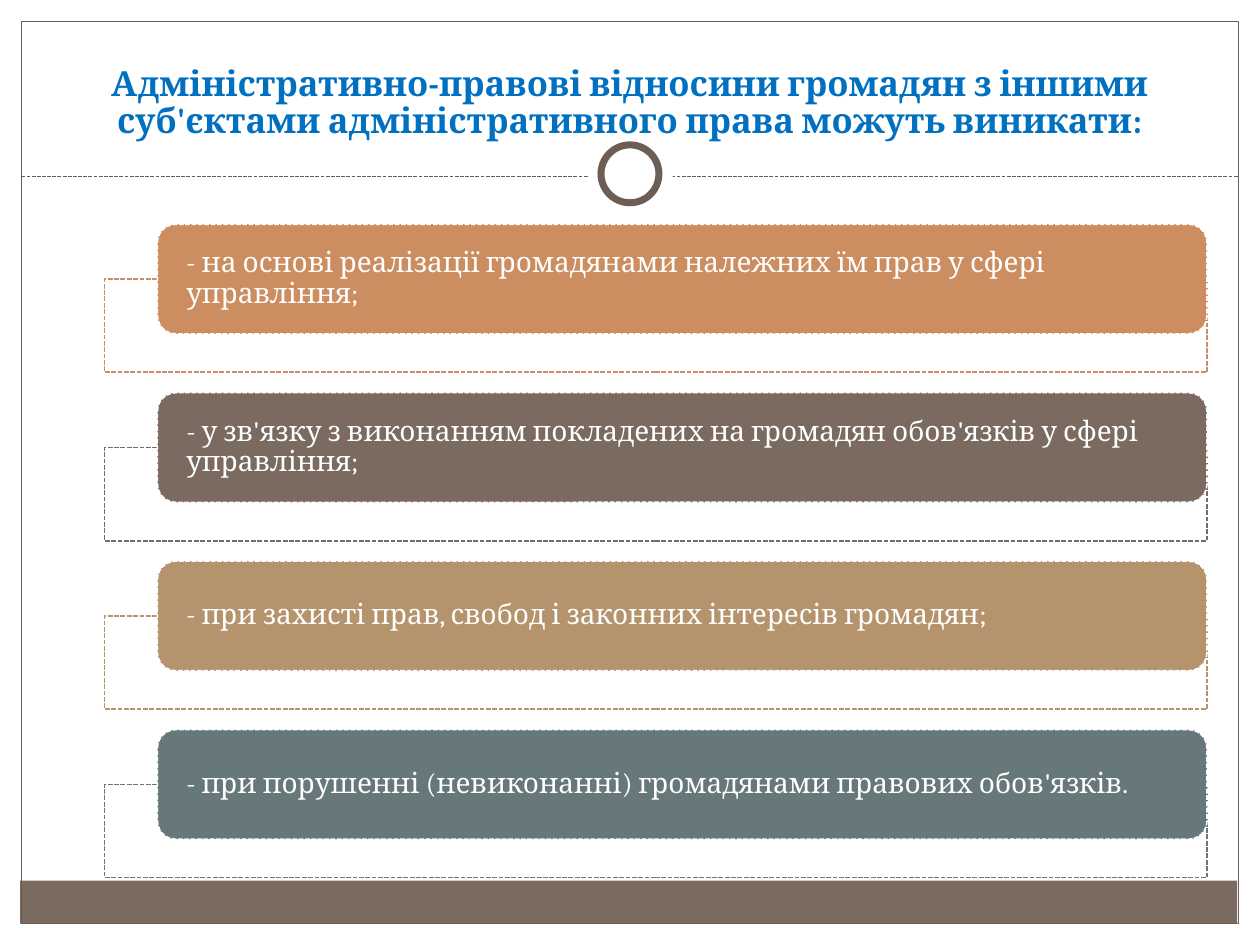
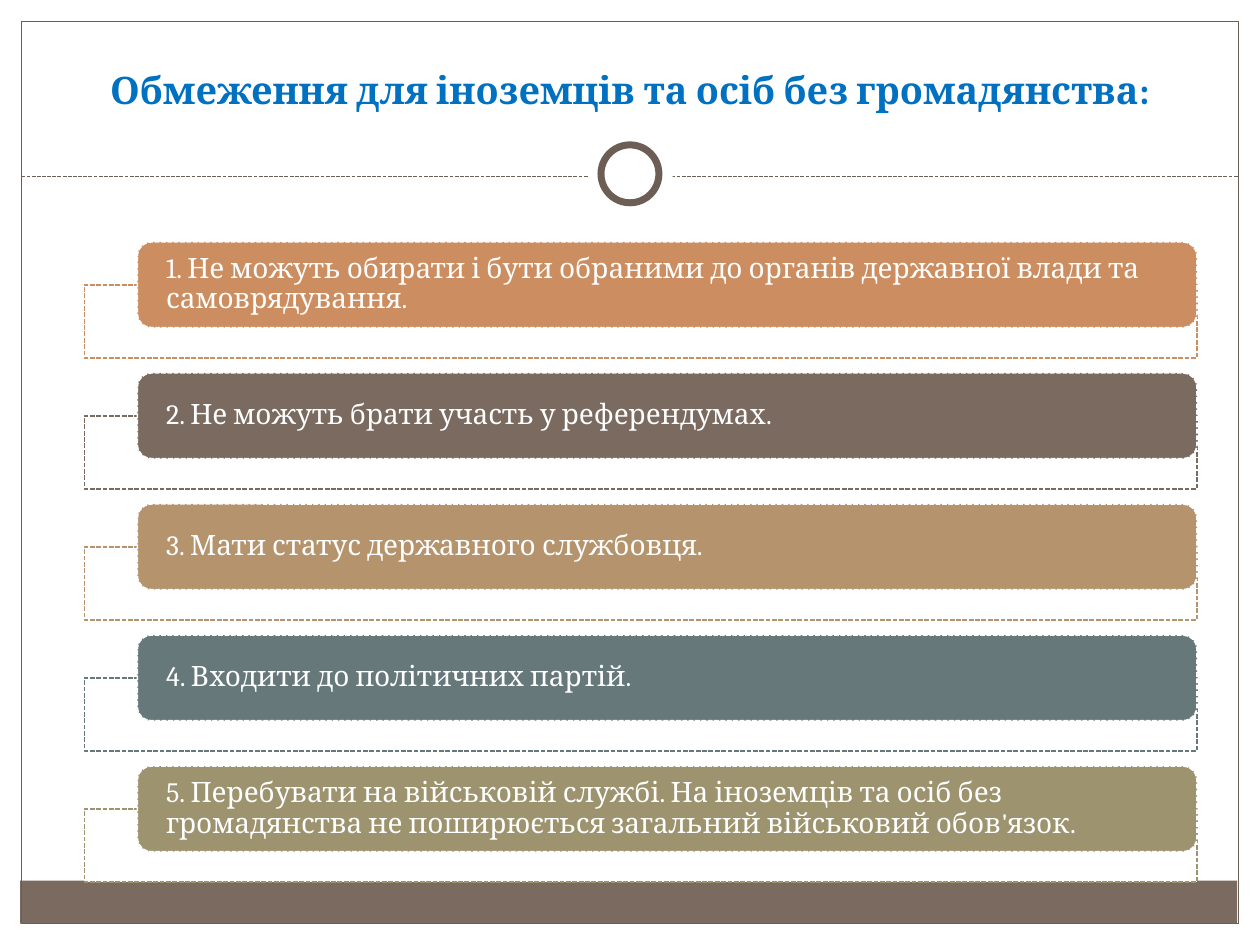
from lxml import etree
from pptx import Presentation
from pptx.dml.color import RGBColor
from pptx.enum.dml import MSO_LINE
from pptx.enum.shapes import MSO_CONNECTOR, MSO_SHAPE
from pptx.enum.text import MSO_ANCHOR, MSO_AUTO_SIZE, PP_ALIGN
from pptx.oxml.ns import qn
from pptx.util import Inches, Pt

RECTANGLE = MSO_SHAPE.RECTANGLE
ROUNDED = MSO_SHAPE.ROUNDED_RECTANGLE
OVAL = MSO_SHAPE.OVAL
STRAIGHT = MSO_CONNECTOR.STRAIGHT
DASH = MSO_LINE.SQUARE_DOT
CENTER, LEFT = PP_ALIGN.CENTER, PP_ALIGN.LEFT
MIDDLE, BOTTOM = MSO_ANCHOR.MIDDLE, MSO_ANCHOR.BOTTOM
NO_AUTOFIT = MSO_AUTO_SIZE.NONE

FONT = "Cambria"
WHITE = "FFFFFF"
TITLE_BLUE = "0070C0"
FRAME_BROWN = "6C5E55"
BAND_BROWN = "7A6A60"
CARD_COLORS = ["CC8E60", BAND_BROWN, "B4936D", "67787B", "9D936F"]

PAGES = [
    {
        "title": "Адміністративно-правові відносини громадян з іншими "
                 "суб'єктами адміністративного права можуть виникати:",
        "title_box": (0.33, 0.25, 9.33, 1.17),
        "title_size": 19.8,
        "title_spacing": 0.9,
        "title_bottom": 0.3,
        "outline_left": 0.83, "card_left": 1.25, "right": 9.58,
        "top": 1.78, "step": 1.337, "card_height": 0.87, "outline_height": 0.74,
        "items": [
            "- на основі реалізації громадянами належних їм прав у сфері управління;",
            "- у зв'язку з виконанням покладених на громадян обов'язків у сфері управління;",
            "- при захисті прав, свобод і законних інтересів громадян;",
            "- при порушенні (невиконанні) громадянами правових обов'язків.",
        ],
    },
    {
        "title": "Обмеження для іноземців та осіб без громадянства:",
        "title_box": (0.5, 0.17, 9, 1.17),
        "title_size": 21.6,
        "title_spacing": 1.0,
        "title_bottom": 0.45,
        "outline_left": 0.67, "card_left": 1.09, "right": 9.5,
        "top": 1.92, "step": 1.04, "card_height": 0.68, "outline_height": 0.58,
        "items": [
            "1. Не можуть обирати і бути обраними до органів державної влади та самоврядування.",
            "2. Не можуть брати участь у референдумах.",
            "3. Мати статус державного службовця.",
            "4. Входити до політичних партій.",
            "5. Перебувати на військовій службі. На іноземців та осіб без громадянства "
            "не поширюється загальний військовий обов'язок.",
        ],
    },
]


def add_box(slide, kind, box, fill=None, line=None, width=0.75, dash=None):
    shape = slide.shapes.add_shape(kind, *[Inches(value) for value in box])
    shape.shadow.inherit = False
    if fill:
        shape.fill.solid()
        shape.fill.fore_color.rgb = RGBColor.from_string(fill)
    else:
        shape.fill.background()
    if line:
        shape.line.color.rgb = RGBColor.from_string(line)
        shape.line.width = Pt(width)
        shape.line.dash_style = dash
    else:
        shape.line.fill.background()
    return shape


def write_text(shape, text, size, color, alignment, anchor, spacing, bold=False):
    frame = shape.text_frame
    frame.text = text
    frame.word_wrap = True
    frame.auto_size = NO_AUTOFIT
    frame.vertical_anchor = anchor
    paragraph = frame.paragraphs[0]
    paragraph.alignment = alignment
    paragraph.line_spacing = spacing
    font = paragraph.runs[0].font
    font.name = FONT
    font.size = Pt(size)
    font.bold = bold
    font.color.rgb = RGBColor.from_string(color)


presentation = Presentation()
presentation.slide_width = Inches(10)
presentation.slide_height = Inches(7.5)

layout = presentation.slide_layouts.get_by_name("Title Only")
for placeholder in list(layout.placeholders)[1:]:
    layout.shapes.element.remove(placeholder.element)
slides = [presentation.slides.add_slide(layout) for page in PAGES]

first = slides[0]
band = add_box(first, RECTANGLE, (0.16, 6.99, 9.66, 0.34), BAND_BROWN)
border = add_box(first, RECTANGLE, (0.17, 0.17, 9.66, 7.16), None, FRAME_BROWN)
divider = first.shapes.add_connector(
    STRAIGHT, Inches(0.17), Inches(1.4), Inches(9.83), Inches(1.4))
divider.line.color.rgb = RGBColor.from_string(FRAME_BROWN)
divider.line.width = Pt(0.75)
divider.line.dash_style = DASH
etree.SubElement(divider.element.spPr, qn("a:effectLst"))
halo = add_box(first, OVAL, (4.67, 1.05, 0.67, 0.67), WHITE)
ring = add_box(first, OVAL, (4.77, 1.15, 0.46, 0.46), WHITE, FRAME_BROWN, 4)
for decoration in (band, border, divider, halo, ring):
    layout.shapes.element.append(decoration.element)

for slide, page in zip(slides, PAGES):
    title = slide.shapes.title
    title.left, title.top, title.width, title.height = [
        Inches(value) for value in page["title_box"]]
    write_text(title, page["title"], page["title_size"], TITLE_BLUE,
               CENTER, BOTTOM, page["title_spacing"], True)
    title.text_frame.margin_bottom = Inches(page["title_bottom"])

    height = page["card_height"]
    outline_width = page["right"] - page["outline_left"]
    card_width = page["right"] - page["card_left"]
    for index, (item, color) in enumerate(zip(page["items"], CARD_COLORS)):
        top = page["top"] + index * page["step"]
        outline = add_box(
            slide, RECTANGLE,
            (page["outline_left"], top + height / 2, outline_width, page["outline_height"]),
            WHITE, color, 0.9, DASH)
        fill_color = outline.element.spPr.find(qn("a:solidFill"))[0]
        etree.SubElement(fill_color, qn("a:alpha"), val="90000")

        card = add_box(slide, ROUNDED, (page["card_left"], top, card_width, height),
                       color, WHITE, 0.9, DASH)
        write_text(card, item, 16, WHITE, LEFT, MIDDLE, 0.9)
        frame = card.text_frame
        frame.margin_left = frame.margin_right = Inches(0.23 - 0.05 * height)
        frame.margin_top = frame.margin_bottom = 0

presentation.save("out.pptx")
